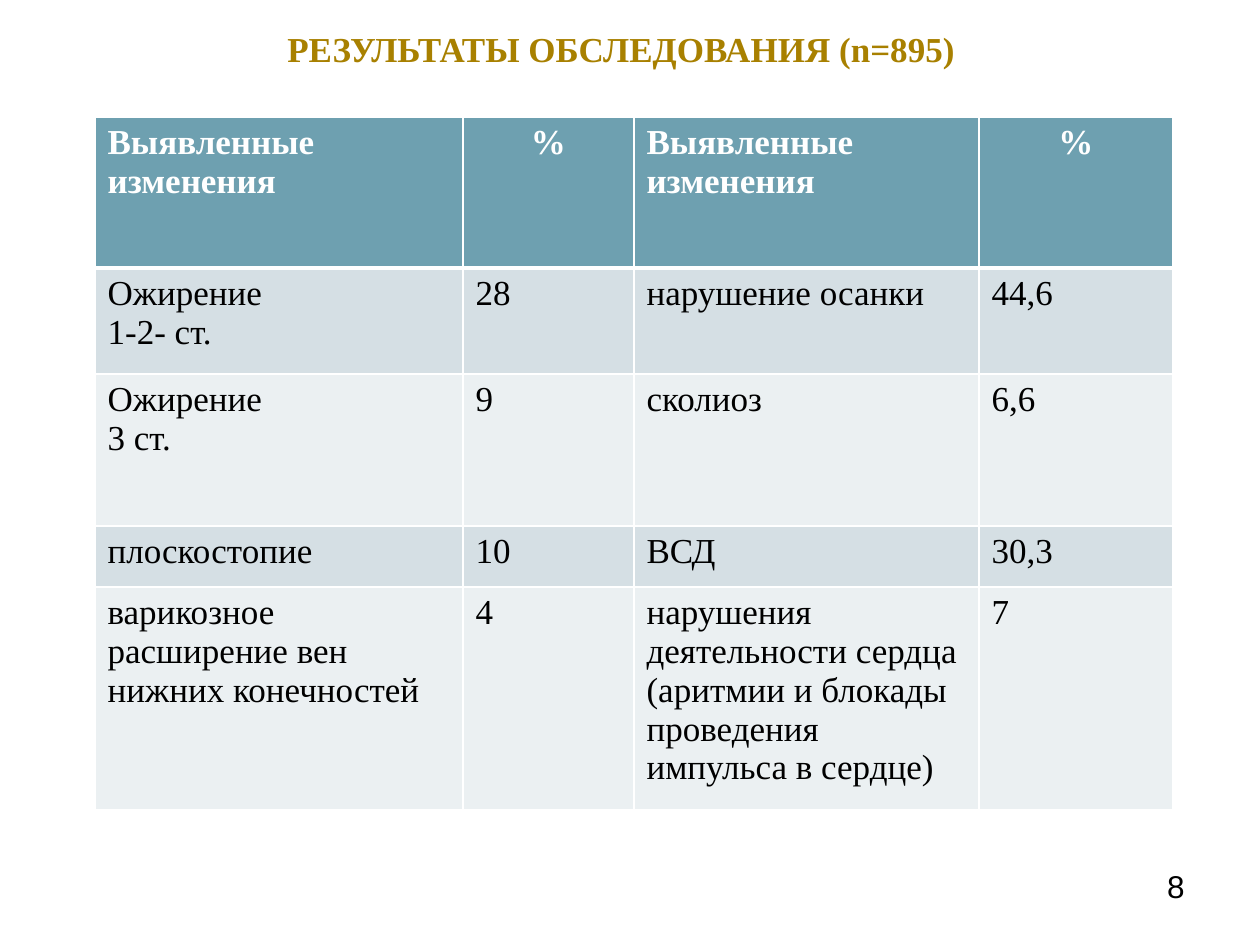
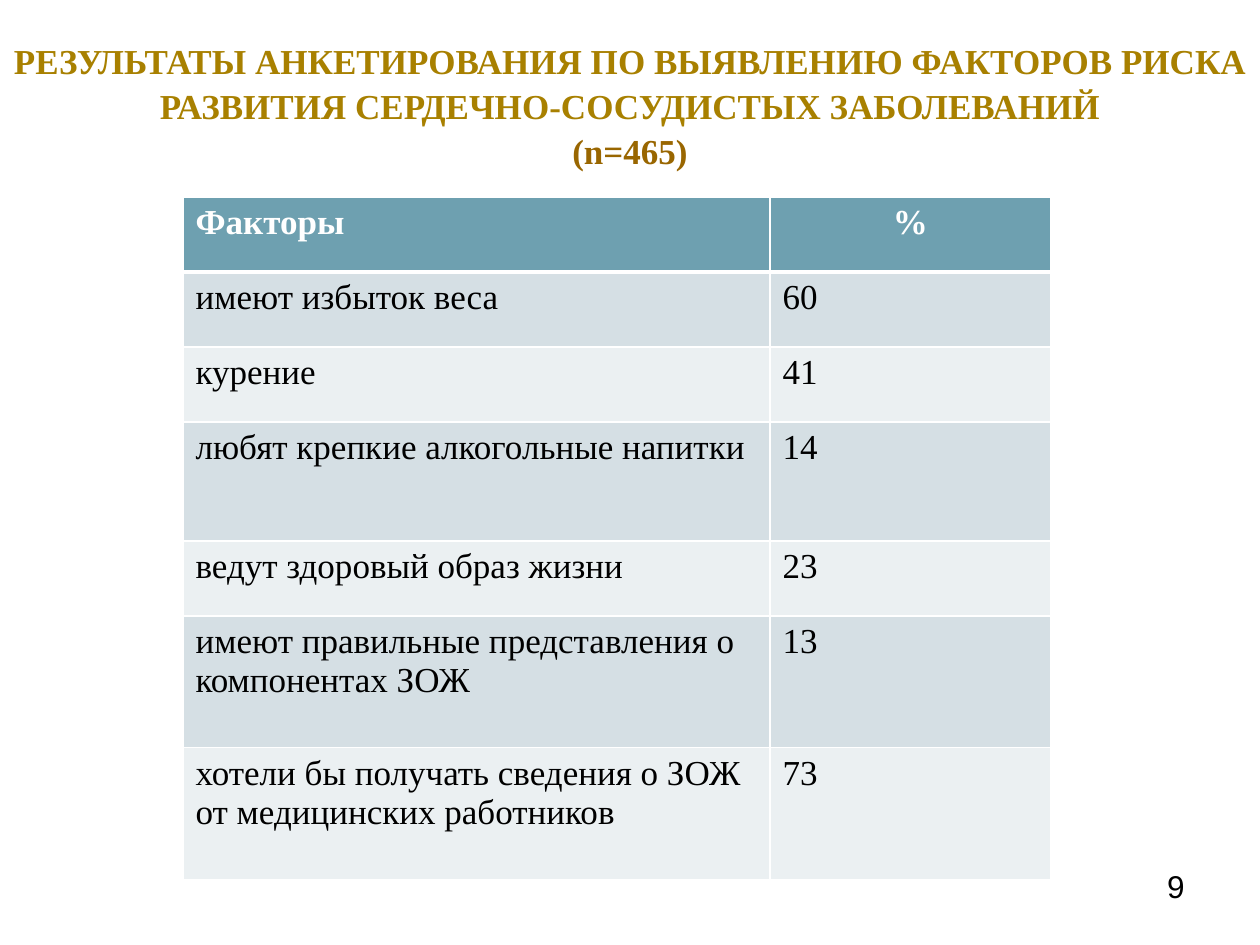
"""Builds two slides of survey results, each with a title, a table and a page number."""
from lxml import etree
from pptx import Presentation
from pptx import util as u
from pptx.dml.color import RGBColor
from pptx.enum import text
from pptx.oxml import ns

GOLD = RGBColor(0xA8, 0x80, 0x00)
BROWN = RGBColor(0x99, 0x66, 0x00)
TEAL = RGBColor(0x6E, 0xA0, 0xB0)
MIST = RGBColor(0xD5, 0xDF, 0xE4)
PALE = RGBColor(0xEB, 0xF0, 0xF2)
WHITE = RGBColor(0xFF, 0xFF, 0xFF)
BLACK = RGBColor(0x00, 0x00, 0x00)
SERIF = "Times New Roman"
ALIGN = text.PP_ALIGN
SCALE = 914400 / 126


def px(num):
    return u.Emu(round(num * SCALE))


def write(para, words, color, bold=False, size=20, face=SERIF):
    run = para.add_run()
    run.text = words
    font = run.font
    font.name, font.size, font.bold = face, u.Pt(size), bold
    font.color.rgb = color


pages = [
    dict(
        num="8",
        title=[("РЕЗУЛЬТАТЫ ОБСЛЕДОВАНИЯ (n=895)", GOLD)],
        head=(0, 19, 1242, 55),
        spot=(95, 117),
        cols=[368, 171, 345, 194],
        rows=[151, 106, 152, 61, 223],
        cells=[
            ["Выявленные изменения", "%", "Выявленные изменения", "%"],
            ["Ожирение\n1-2- ст.", "28", "нарушение осанки", "44,6"],
            ["Ожирение\n3 ст.", "9", "сколиоз", "6,6"],
            ["плоскостопие", "10", "ВСД", "30,3"],
            ["варикозное расширение вен нижних конечностей", "4",
             "нарушения деятельности сердца (аритмии и блокады проведения импульса в сердце)", "7"],
        ],
    ),
    dict(
        num="9",
        title=[("РЕЗУЛЬТАТЫ АНКЕТИРОВАНИЯ ПО ВЫЯВЛЕНИЮ ФАКТОРОВ РИСКА "
                "РАЗВИТИЯ СЕРДЕЧНО-СОСУДИСТЫХ ЗАБОЛЕВАНИЙ", GOLD),
               ("(n=465)", BROWN)],
        head=(0, 34, 1260, 140),
        spot=(183, 197),
        cols=[587, 281],
        rows=[75, 75, 75, 119, 75, 132, 132],
        cells=[
            ["Факторы", "%"],
            ["имеют избыток веса", "60"],
            ["курение", "41"],
            ["любят крепкие алкогольные напитки", "14"],
            ["ведут здоровый образ жизни", "23"],
            ["имеют правильные представления о компонентах ЗОЖ", "13"],
            ["хотели бы получать сведения о ЗОЖ от медицинских работников", "73"],
        ],
    ),
]

deck = Presentation()
deck.slide_width, deck.slide_height = px(1260), px(945)

for page in pages:
    slide = deck.slides.add_slide(deck.slide_layouts[5])

    title = slide.shapes.title
    title.left, title.top, title.width, title.height = map(px, page["head"])
    frame = title.text_frame
    frame.word_wrap = True
    frame.auto_size = text.MSO_AUTO_SIZE.NONE
    frame.vertical_anchor = text.MSO_ANCHOR.MIDDLE
    frame.margin_left = frame.margin_right = px(6)
    for i, (line, color) in enumerate(page["title"]):
        para = frame.add_paragraph() if i else frame.paragraphs[0]
        para.alignment = ALIGN.CENTER
        para.line_spacing = 1.08
        para.space_before = u.Pt(0)
        write(para, line, color, bold=True)

    cols, rows = page["cols"], page["rows"]
    size = (*page["spot"], sum(cols), sum(rows))
    table = slide.shapes.add_table(len(rows), len(cols), *map(px, size)).table
    for col, wide in zip(table.columns, cols):
        col.width = px(wide)
    for r, (row, tall) in enumerate(zip(table.rows, rows)):
        row.height = px(tall)
        for cell, words in zip(row.cells, page["cells"][r]):
            props = cell._tc.get_or_add_tcPr()
            for side in "LRTB":
                thick = 3 if (r, side) in ((0, "B"), (1, "T")) else 1
                edge = etree.SubElement(props, ns.qn("a:ln" + side), w=str(u.Pt(thick)))
                fill = etree.SubElement(edge, ns.qn("a:solidFill"))
                etree.SubElement(fill, ns.qn("a:srgbClr"), val=str(WHITE))
            cell.fill.solid()
            cell.fill.fore_color.rgb = (MIST if r % 2 else PALE) if r else TEAL
            for i, line in enumerate(words.split("\n")):
                para = cell.text_frame.add_paragraph() if i else cell.text_frame.paragraphs[0]
                para.alignment = ALIGN.CENTER if line == "%" else ALIGN.LEFT
                write(para, line, BLACK if r else WHITE, bold=not r)

    foot = slide.shapes.add_textbox(*map(px, (903, 861, 294, 65))).text_frame
    foot.word_wrap = True
    foot.paragraphs[0].alignment = ALIGN.RIGHT
    write(foot.paragraphs[0], page["num"], BLACK, size=18, face="Arial")

deck.save("out.pptx")
